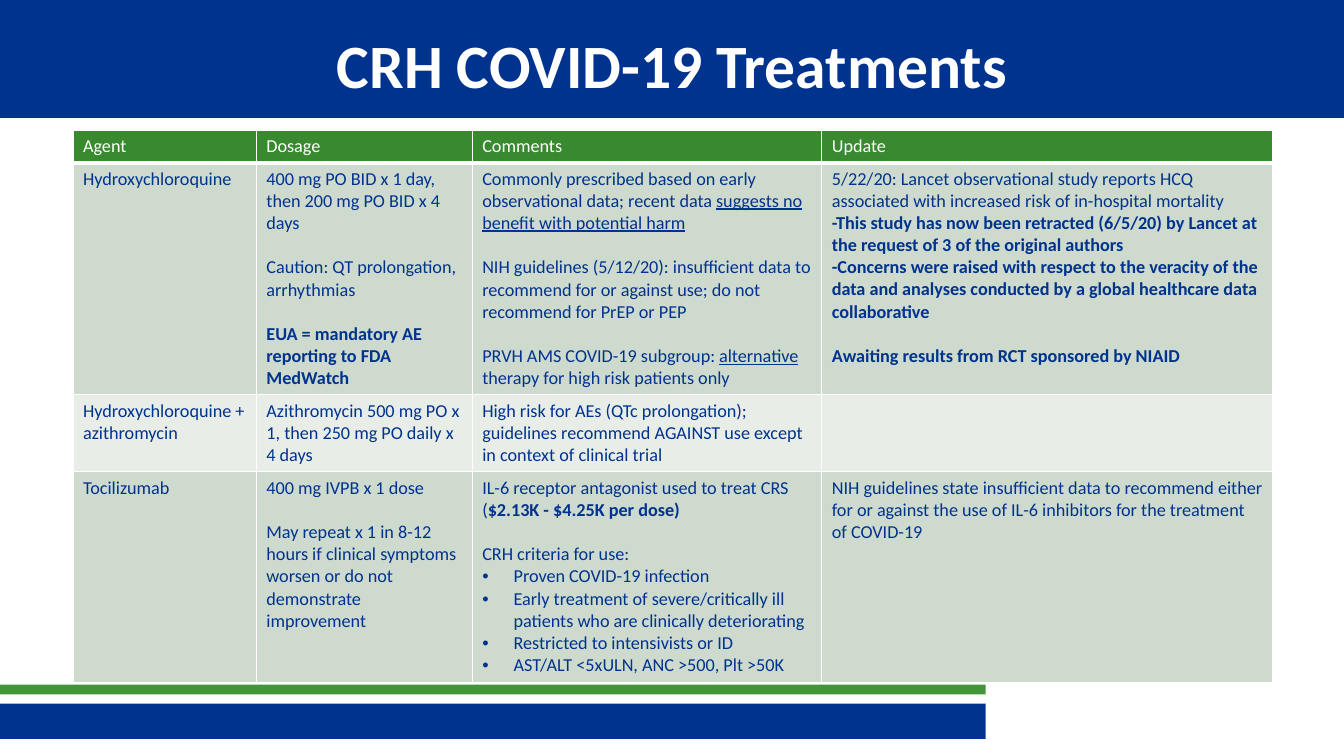
from lxml import etree
from pptx import Presentation
from pptx.dml.color import RGBColor
from pptx.enum.shapes import MSO_SHAPE
from pptx.enum.text import MSO_ANCHOR, PP_ALIGN
from pptx.oxml.ns import qn
from pptx.util import Cm, Pt

RECTANGLE = MSO_SHAPE.RECTANGLE
MIDDLE = MSO_ANCHOR.MIDDLE
CENTER = PP_ALIGN.CENTER

NAVY = RGBColor(0x00, 0x33, 0x8E)
BAND_GREEN = RGBColor(0x43, 0x95, 0x39)
HEADER_GREEN = RGBColor(0x39, 0x89, 0x2F)
DARK_ROW = RGBColor(0xCE, 0xDA, 0xCD)
LIGHT_ROW = RGBColor(0xE8, 0xED, 0xE8)
WHITE = RGBColor(0xFF, 0xFF, 0xFF)

FONT = "Calibri"
TABLE_SIZE = Pt(13)
BLANK_LINE = Pt(15.87)
BULLET_INDENT = Cm(0.79)
PLAIN, BOLD, UNDERLINE = "plain", "bold", "underline"
LINE, GAP, BULLET = "line", "gap", "bullet"

TITLE = "CRH COVID-19 Treatments"
BANDS = [
    (-0.08, 17.73, 24.92, 0.89, NAVY),
    (-0.08, 17.25, 24.92, 0.25, BAND_GREEN),
    (0, 0, 33.87, 2.97, NAVY),
]
COLUMN_WIDTHS = [4.62, 5.44, 8.81, 11.35]
ROW_HEIGHTS = [0.82, 5.83, 1.94, 5.31]

HEADERS = ["Agent", "Dosage", "Comments", "Update"]
TREATMENTS = [
    [
        [(LINE, [("Hydroxychloroquine", PLAIN)])],
        [
            (LINE, [("400 mg PO BID x 1 day, then 200 mg PO BID x 4 days", PLAIN)]),
            (GAP, [("Caution: QT prolongation, arrhythmias", PLAIN)]),
            (GAP, [("EUA = mandatory AE reporting to FDA MedWatch", BOLD)]),
        ],
        [
            (LINE, [("Commonly prescribed based on early observational data; recent data ", PLAIN),
                    ("suggests no benefit with potential harm", UNDERLINE)]),
            (GAP, [("NIH guidelines (5/12/20): insufficient data to recommend for or against use; "
                    "do not recommend for PrEP or PEP", PLAIN)]),
            (GAP, [("PRVH AMS COVID-19 subgroup: ", PLAIN),
                   ("alternative", UNDERLINE),
                   (" therapy for high risk patients only", PLAIN)]),
        ],
        [
            (LINE, [("5/22/20: Lancet observational study reports HCQ associated with "
                     "increased risk of in-hospital mortality", PLAIN)]),
            (LINE, [("-This study has now been retracted (6/5/20) by Lancet at the request "
                     "of 3 of the original authors", BOLD)]),
            (LINE, [("-Concerns were raised with respect to the veracity of the data and "
                     "analyses conducted by a global healthcare data collaborative", BOLD)]),
            (GAP, [("Awaiting results from RCT sponsored by NIAID", BOLD)]),
        ],
    ],
    [
        [(LINE, [("Hydroxychloroquine + azithromycin", PLAIN)])],
        [(LINE, [("Azithromycin 500 mg PO x 1, then 250 mg PO daily x 4 days", PLAIN)])],
        [(LINE, [("High risk for AEs (QTc prolongation); guidelines recommend AGAINST use "
                  "except in context of clinical trial", PLAIN)])],
        [],
    ],
    [
        [(LINE, [("Tocilizumab", PLAIN)])],
        [
            (LINE, [("400 mg IVPB x 1 dose", PLAIN)]),
            (GAP, [("May repeat x 1 in 8-12 hours if clinical symptoms worsen or do not "
                    "demonstrate improvement", PLAIN)]),
        ],
        [
            (LINE, [("IL-6 receptor antagonist used to treat CRS (", PLAIN),
                    ("$2.13K - $4.25K per dose)", BOLD)]),
            (GAP, [("CRH criteria for use:", PLAIN)]),
            (BULLET, [("Proven COVID-19 infection", PLAIN)]),
            (BULLET, [("Early treatment of severe/critically ill patients who are "
                       "clinically deteriorating", PLAIN)]),
            (BULLET, [("Restricted to intensivists or ID", PLAIN)]),
            (BULLET, [("AST/ALT <5xULN, ANC >500, Plt >50K", PLAIN)]),
        ],
        [(LINE, [("NIH guidelines state insufficient data to recommend either for or against "
                  "the use of IL-6 inhibitors for the treatment of COVID-19", PLAIN)])],
    ],
]


def add_run(paragraph, text, size, color, style=PLAIN):
    run = paragraph.add_run()
    run.text = text
    run.font.name = FONT
    run.font.size = size
    run.font.color.rgb = color
    run.font.bold = style == BOLD
    run.font.underline = style == UNDERLINE


def add_bullet(paragraph):
    properties = paragraph._p.get_or_add_pPr()
    properties.set("marL", str(BULLET_INDENT))
    properties.set("indent", str(-BULLET_INDENT))
    etree.SubElement(properties, qn("a:buFont")).set("typeface", "Arial")
    etree.SubElement(properties, qn("a:buChar")).set("char", "•")


def set_borders(cell, bottom_width):
    properties = cell._tc.get_or_add_tcPr()
    widths = {"a:lnL": Pt(1), "a:lnR": Pt(1), "a:lnT": Pt(1), "a:lnB": bottom_width}
    for tag, width in widths.items():
        border = etree.SubElement(properties, qn(tag))
        border.set("w", str(width))
        fill = etree.SubElement(border, qn("a:solidFill"))
        etree.SubElement(fill, qn("a:srgbClr")).set("val", str(WHITE))


def fill_cell(cell, paragraphs, fill_color, text_color, bottom_width):
    set_borders(cell, bottom_width)
    cell.fill.solid()
    cell.fill.fore_color.rgb = fill_color
    frame = cell.text_frame
    for index, (kind, runs) in enumerate(paragraphs):
        paragraph = frame.add_paragraph() if index else frame.paragraphs[0]
        if kind == BULLET:
            add_bullet(paragraph)
        if kind == GAP:
            paragraph.space_before = BLANK_LINE
        for text, style in runs:
            add_run(paragraph, text, TABLE_SIZE, text_color, style)


def add_title(slide):
    title = slide.shapes.title
    title.left, title.top, title.width, title.height = Cm(1.7), Cm(0.43), Cm(30.48), Cm(2.34)
    title.text_frame.vertical_anchor = MIDDLE
    paragraph = title.text_frame.paragraphs[0]
    paragraph.alignment = CENTER
    add_run(paragraph, TITLE, Pt(44), WHITE, BOLD)
    return title


def add_bands(slide, title):
    for left, top, width, height, color in BANDS:
        band = slide.shapes.add_shape(RECTANGLE, Cm(left), Cm(top), Cm(width), Cm(height))
        band.shadow.inherit = False
        band.fill.solid()
        band.fill.fore_color.rgb = color
        band.line.fill.background()
        title.element.addprevious(band.element)


def add_treatment_table(slide):
    table = slide.shapes.add_table(
        len(ROW_HEIGHTS), len(COLUMN_WIDTHS), Cm(1.84), Cm(3.28),
        Cm(sum(COLUMN_WIDTHS)), Cm(sum(ROW_HEIGHTS))).table
    for column, width in zip(table.columns, COLUMN_WIDTHS):
        column.width = Cm(width)
    for row, height in zip(table.rows, ROW_HEIGHTS):
        row.height = Cm(height)
    for column, header in enumerate(HEADERS):
        fill_cell(table.cell(0, column), [(LINE, [(header, PLAIN)])], HEADER_GREEN, WHITE, Pt(3))
    for row, treatment in enumerate(TREATMENTS, start=1):
        fill_color = DARK_ROW if row % 2 else LIGHT_ROW
        for column, paragraphs in enumerate(treatment):
            fill_cell(table.cell(row, column), paragraphs, fill_color, NAVY, Pt(1))


def main():
    presentation = Presentation()
    presentation.slide_width = Cm(33.87)
    presentation.slide_height = Cm(19.05)
    slide = presentation.slides.add_slide(presentation.slide_layouts[5])
    title = add_title(slide)
    add_bands(slide, title)
    add_treatment_table(slide)
    presentation.save("out.pptx")


if __name__ == "__main__":
    main()
